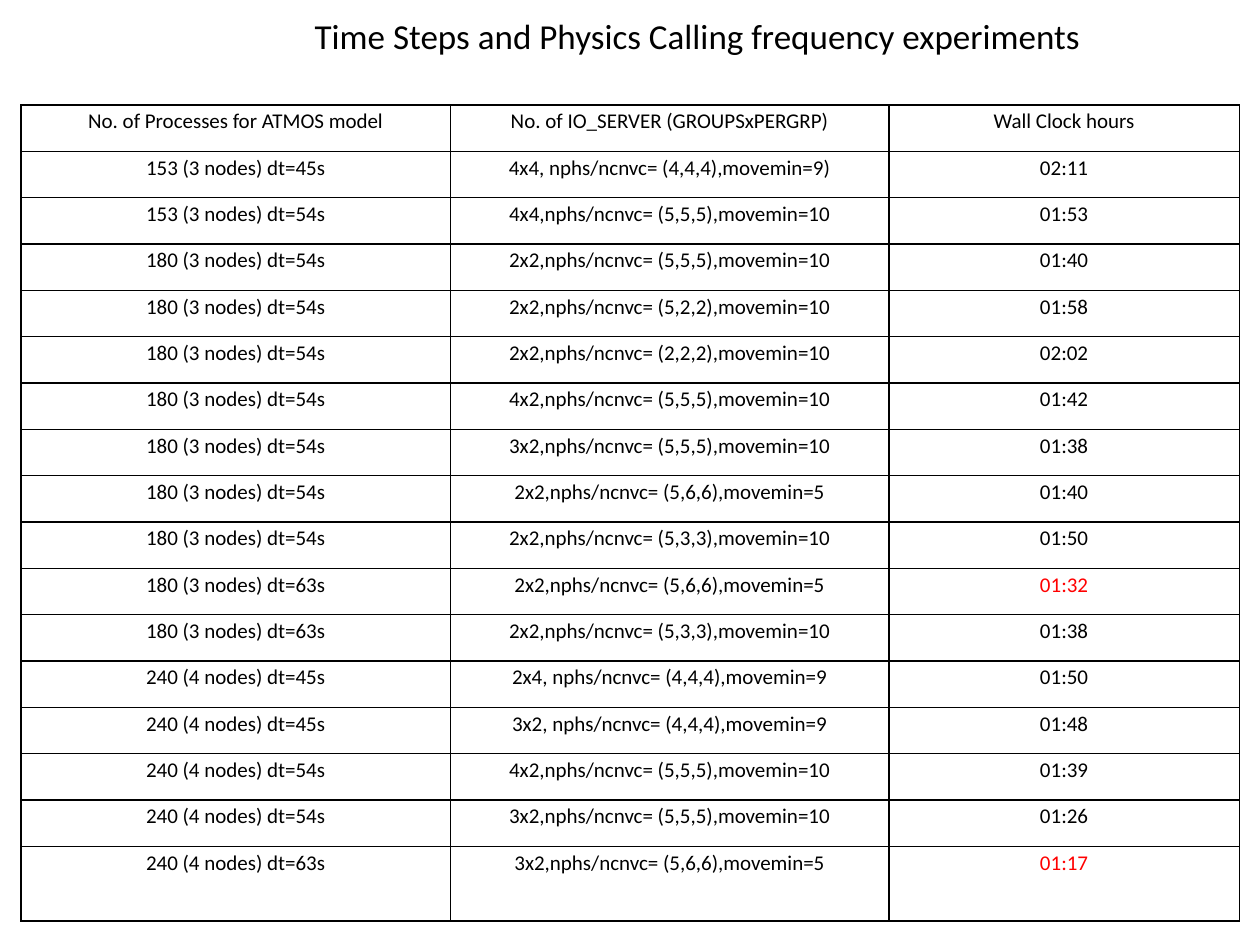
from lxml import etree
from pptx import Presentation
from pptx.dml.color import RGBColor
from pptx.enum.text import MSO_ANCHOR, MSO_AUTO_SIZE, PP_ALIGN
from pptx.oxml.ns import qn
from pptx.util import Pt

CENTER = PP_ALIGN.CENTER
TOP = MSO_ANCHOR.TOP
NO_AUTOFIT = MSO_AUTO_SIZE.NONE

FONT = "Calibri"
COLORS = {"text": "000000", "border": "000000", "fastest": "FF0000"}
TITLE_ONLY = 5

HEADERS = [
    "No. of Processes for ATMOS model",
    "No. of IO_SERVER (GROUPSxPERGRP)",
    "Wall Clock hours",
]
EXPERIMENTS = [
    ("153 (3 nodes) dt=45s", "4x4, nphs/ncnvc= (4,4,4),movemin=9)", "02:11"),
    ("153 (3 nodes) dt=54s", "4x4,nphs/ncnvc= (5,5,5),movemin=10", "01:53"),
    ("180 (3 nodes) dt=54s", "2x2,nphs/ncnvc= (5,5,5),movemin=10", "01:40"),
    ("180 (3 nodes) dt=54s", "2x2,nphs/ncnvc= (5,2,2),movemin=10", "01:58"),
    ("180 (3 nodes) dt=54s", "2x2,nphs/ncnvc= (2,2,2),movemin=10", "02:02"),
    ("180 (3 nodes) dt=54s", "4x2,nphs/ncnvc= (5,5,5),movemin=10", "01:42"),
    ("180 (3 nodes) dt=54s", "3x2,nphs/ncnvc= (5,5,5),movemin=10", "01:38"),
    ("180 (3 nodes) dt=54s", "2x2,nphs/ncnvc= (5,6,6),movemin=5", "01:40"),
    ("180 (3 nodes) dt=54s", "2x2,nphs/ncnvc= (5,3,3),movemin=10", "01:50"),
    ("180 (3 nodes) dt=63s", "2x2,nphs/ncnvc= (5,6,6),movemin=5", "01:32"),
    ("180 (3 nodes) dt=63s", "2x2,nphs/ncnvc= (5,3,3),movemin=10", "01:38"),
    ("240 (4 nodes) dt=45s", "2x4, nphs/ncnvc= (4,4,4),movemin=9", "01:50"),
    ("240 (4 nodes) dt=45s", "3x2, nphs/ncnvc= (4,4,4),movemin=9", "01:48"),
    ("240 (4 nodes) dt=54s", "4x2,nphs/ncnvc= (5,5,5),movemin=10", "01:39"),
    ("240 (4 nodes) dt=54s", "3x2,nphs/ncnvc= (5,5,5),movemin=10", "01:26"),
    ("240 (4 nodes) dt=63s", "3x2,nphs/ncnvc= (5,6,6),movemin=5", "01:17"),
]
FASTEST_TIMES = {"01:32", "01:17"}
COLUMN_WIDTHS = [245.4, 250.6, 200.2]
ROW_HEIGHT = 26.5
LAST_ROW_HEIGHT = 42.8


def add_text(paragraph, text, size, color):
    paragraph.alignment = CENTER
    run = paragraph.add_run()
    run.text = text
    run.font.name = FONT
    run.font.size = Pt(size)
    run.font.color.rgb = RGBColor.from_string(COLORS[color])


def add_borders(cell):
    properties = cell._tc.get_or_add_tcPr()
    for position, side in enumerate(("a:lnL", "a:lnR", "a:lnT", "a:lnB")):
        line = etree.Element(qn(side), w=str(Pt(1)))
        fill = etree.SubElement(line, qn("a:solidFill"))
        etree.SubElement(fill, qn("a:srgbClr"), val=COLORS["border"])
        properties.insert(position, line)


presentation = Presentation()
presentation.slide_width = Pt(720)
presentation.slide_height = Pt(540)
slide = presentation.slides.add_slide(presentation.slide_layouts[TITLE_ONLY])

# Title
title = slide.shapes.title
title.left, title.top, title.width, title.height = Pt(161.3), Pt(4.5), Pt(474.5), Pt(55.5)
title.text_frame.auto_size = NO_AUTOFIT
title.text_frame.word_wrap = True
title.text_frame.vertical_anchor = TOP
add_text(
    title.text_frame.paragraphs[0],
    "Time Steps and Physics Calling frequency experiments",
    20,
    "text",
)

# Table grid
rows = [HEADERS, *EXPERIMENTS]
table_height = ROW_HEIGHT * len(EXPERIMENTS) + LAST_ROW_HEIGHT
table = slide.shapes.add_table(
    len(rows), len(HEADERS), Pt(12), Pt(60), Pt(sum(COLUMN_WIDTHS)), Pt(table_height)
).table
table.first_row = False
table.horz_banding = False
for column, width in zip(table.columns, COLUMN_WIDTHS):
    column.width = Pt(width)
for row in table.rows:
    row.height = Pt(ROW_HEIGHT)
table.rows[len(rows) - 1].height = Pt(LAST_ROW_HEIGHT)

# Table cells, with the fastest runs in red
for row_index, values in enumerate(rows):
    for column_index, value in enumerate(values):
        cell = table.cell(row_index, column_index)
        cell.fill.background()
        cell.margin_left = cell.margin_right = Pt(5)
        cell.margin_top = cell.margin_bottom = Pt(0)
        cell.vertical_anchor = TOP
        paragraph = cell.text_frame.paragraphs[0]
        paragraph.line_spacing = 1.15
        add_text(paragraph, value, 12, "fastest" if value in FASTEST_TIMES else "text")
        add_borders(cell)

presentation.save("out.pptx")
